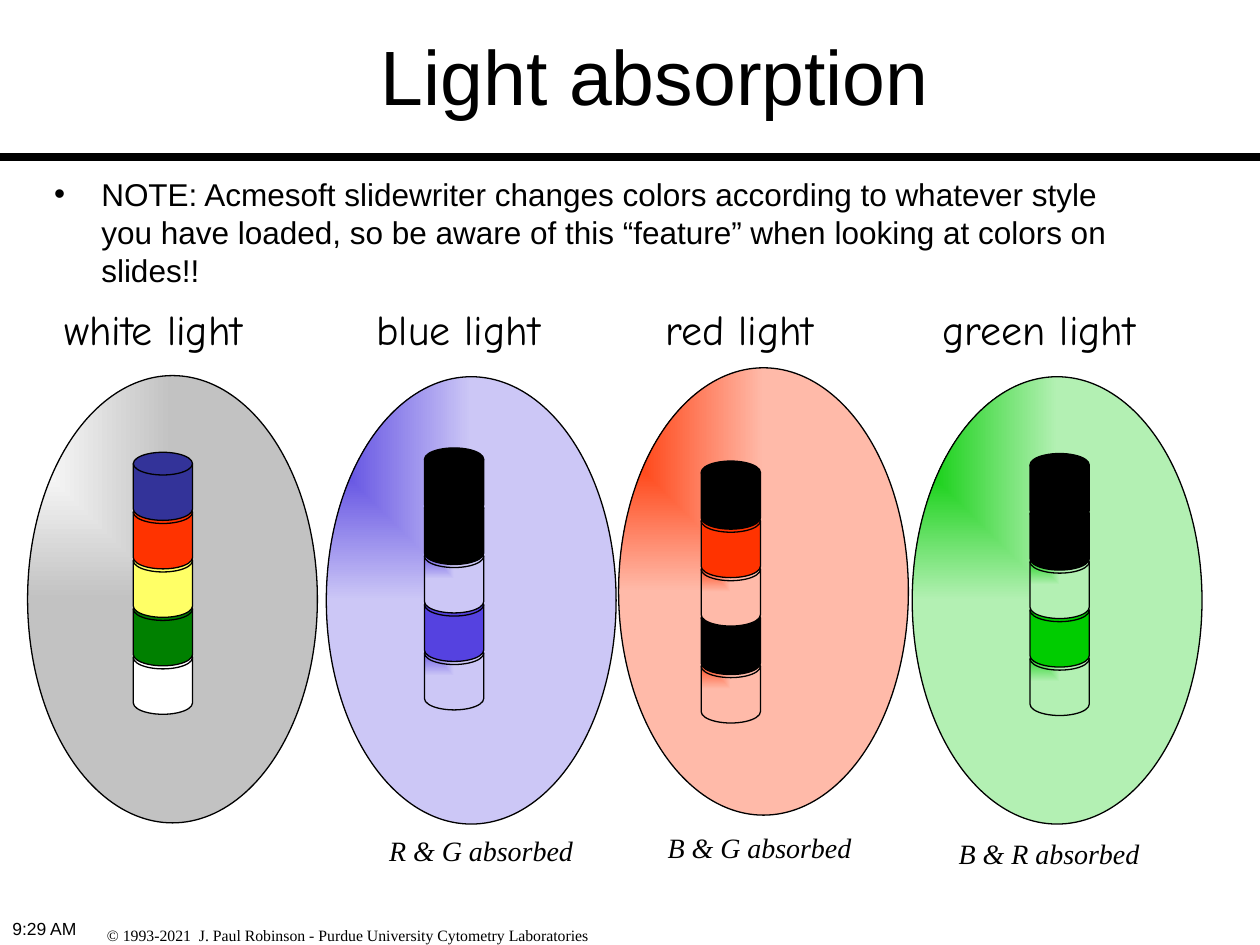
import lxml.etree
import pptx
import pptx.dml.color
import pptx.enum.shapes
import pptx.enum.text
import pptx.oxml.ns
import pptx.util

Pt = pptx.util.Pt
SHAPES = pptx.enum.shapes.MSO_SHAPE
ANCHORS = pptx.enum.text.MSO_ANCHOR
ALIGNMENTS = pptx.enum.text.PP_ALIGN

BLACK = "000000"
GLOW = "glow"  # a disk that takes the gradient of its light
LIGHT_SIZE = (165.6, 255.6)
DISK_SIZE = (33.84, 38.88)
DISK_STEP = 27.7

TITLE_FORMAT = {"name": "Arial", "size": Pt(44)}
NOTE_FORMAT = {"name": "Arial", "size": Pt(18)}
TIME_FORMAT = {"name": "Arial", "size": Pt(10)}
LABEL_FORMAT = {"name": "Comic Neue", "size": Pt(24)}
CAPTION_FORMAT = {"name": "Times New Roman", "size": Pt(16), "italic": True}
FOOTER_FORMAT = {"name": "Times New Roman", "size": Pt(9)}

# Disk colours run from top to bottom
LIGHTS = [
    {"label": "white light", "label_left": 29.5, "light_at": (15.8, 214.6),
     "glow": ("FFFFFF", "C2C2C2"), "disks_at": (76.2, 258.5),
     "disks": ["333399", "FF3300", "FFFF66", "008000", "FFFFFF"]},
    {"label": "blue light", "label_left": 208, "light_at": (186.5, 215.3),
     "glow": ("5542E0", "CCC7F6"), "disks_at": (242.6, 256),
     "disks": [BLACK, BLACK, GLOW, "5542E0", GLOW],
     "caption": "R & G absorbed", "caption_at": (215.3, 473)},
    {"label": "red light", "label_left": 373, "light_at": (353.5, 210.2),
     "glow": ("FF3300", "FFBAA9"), "disks_at": (400.7, 263.5),
     "disks": [BLACK, "FF3300", GLOW, BLACK, GLOW],
     "caption": "B & G absorbed", "caption_at": (374.4, 470.9)},
    {"label": "green light", "label_left": 531.4, "light_at": (521.3, 215.3),
     "glow": ("00CC00", "B3F0B3"), "disks_at": (588.6, 259.2),
     "disks": [BLACK, BLACK, GLOW, "00CC00", GLOW],
     "caption": "B & R absorbed", "caption_at": (540.7, 474.5)},
]


def color(hex_text):
    return pptx.dml.color.RGBColor.from_string(hex_text)


def add_element(parent, tag, **attributes):
    return lxml.etree.SubElement(parent, pptx.oxml.ns.qn(tag), **attributes)


def write_text(box, text, font_format):
    para = box.text_frame.paragraphs[0]
    span = para.add_run()
    span.text = text
    for name, value in font_format.items():
        setattr(span.font, name, value)
    span.font.color.rgb = color(BLACK)
    return para


def add_text(page, text, bounds, font_format, wrap=True):
    box = page.shapes.add_textbox(*map(Pt, bounds))
    box.text_frame.word_wrap = wrap
    return write_text(box, text, font_format)


def add_bullet(para):
    properties = para._p.get_or_add_pPr()
    properties.set("marL", str(Pt(27)))
    properties.set("indent", str(-Pt(27)))
    add_element(properties, "a:buFont", typeface="Arial")
    add_element(properties, "a:buChar", char="•")


def fill_with_glow(shape, glow):
    """Spread a gradient from the top left corner."""
    shape.fill.gradient()
    for stop, hex_text in zip(shape.fill.gradient_stops, glow):
        stop.color.rgb = color(hex_text)
    gradient = shape._element.spPr.find(pptx.oxml.ns.qn("a:gradFill"))
    linear = gradient.find(pptx.oxml.ns.qn("a:lin"))
    spread = add_element(gradient, "a:path", path="rect")
    add_element(spread, "a:fillToRect", r="100000", b="100000")
    gradient.replace(linear, spread)


def add_outlined(page, kind, bounds, fill, line_width=0.75):
    """Fill is one colour, or a pair of them for a gradient."""
    shape = page.shapes.add_shape(kind, *map(Pt, bounds))
    shape.shadow.inherit = False
    if isinstance(fill, tuple):
        fill_with_glow(shape, fill)
    else:
        shape.fill.solid()
        shape.fill.fore_color.rgb = color(fill)
    shape.line.color.rgb = color(BLACK)
    shape.line.width = Pt(line_width)


def add_title(page, text):
    title = page.shapes.title
    bounds = {"left": 68.4, "top": -2.2, "width": 612, "height": 90}
    for name, value in bounds.items():
        setattr(title, name, Pt(value))
    title.text_frame.vertical_anchor = ANCHORS.MIDDLE
    write_text(title, text, TITLE_FORMAT).alignment = ALIGNMENTS.CENTER


def add_light(page, light):
    add_outlined(page, SHAPES.OVAL, (*light["light_at"], *LIGHT_SIZE), light["glow"])

    # Stack the disks from the bottom, so each covers the lid below it
    left, top = light["disks_at"]
    for row, fill in reversed(list(enumerate(light["disks"]))):
        bounds = (left, top + row * DISK_STEP, *DISK_SIZE)
        add_outlined(page, SHAPES.FLOWCHART_MAGNETIC_DISK, bounds,
                     light["glow"] if fill == GLOW else fill)

    add_text(page, light["label"], (light["label_left"], 170, 145.4, 36), LABEL_FORMAT)
    if "caption" in light:
        add_text(page, light["caption"], (*light["caption_at"], 119.5, 26.6),
                 CAPTION_FORMAT, wrap=False)


def main():
    deck = pptx.Presentation()
    deck.slide_width, deck.slide_height = Pt(720), Pt(540)
    page = deck.slides.add_slide(deck.slide_layouts[5])

    # Footer
    add_text(page, "© 1993-2021  J. Paul Robinson - Purdue University Cytometry Laboratories",
             (54, 525.6, 399, 18), FOOTER_FORMAT)
    add_text(page, "9:29 AM", (0, 521.3, 167.8, 18), TIME_FORMAT)

    # Heading and note
    add_title(page, "Light absorption")
    note = add_text(
        page,
        "NOTE: Acmesoft slidewriter changes colors according to whatever style "
        "you have loaded, so be aware of this “feature” when looking at colors on slides!!",
        (23.8, 96.5, 617, 47.5), NOTE_FORMAT)
    add_bullet(note)

    # Lights with their disks and words
    for light in LIGHTS:
        add_light(page, light)

    # Rule below the heading
    add_outlined(page, SHAPES.RECTANGLE, (0, 87.8, 720, 3.6), BLACK, line_width=1)
    deck.save("out.pptx")


if __name__ == "__main__":
    main()
